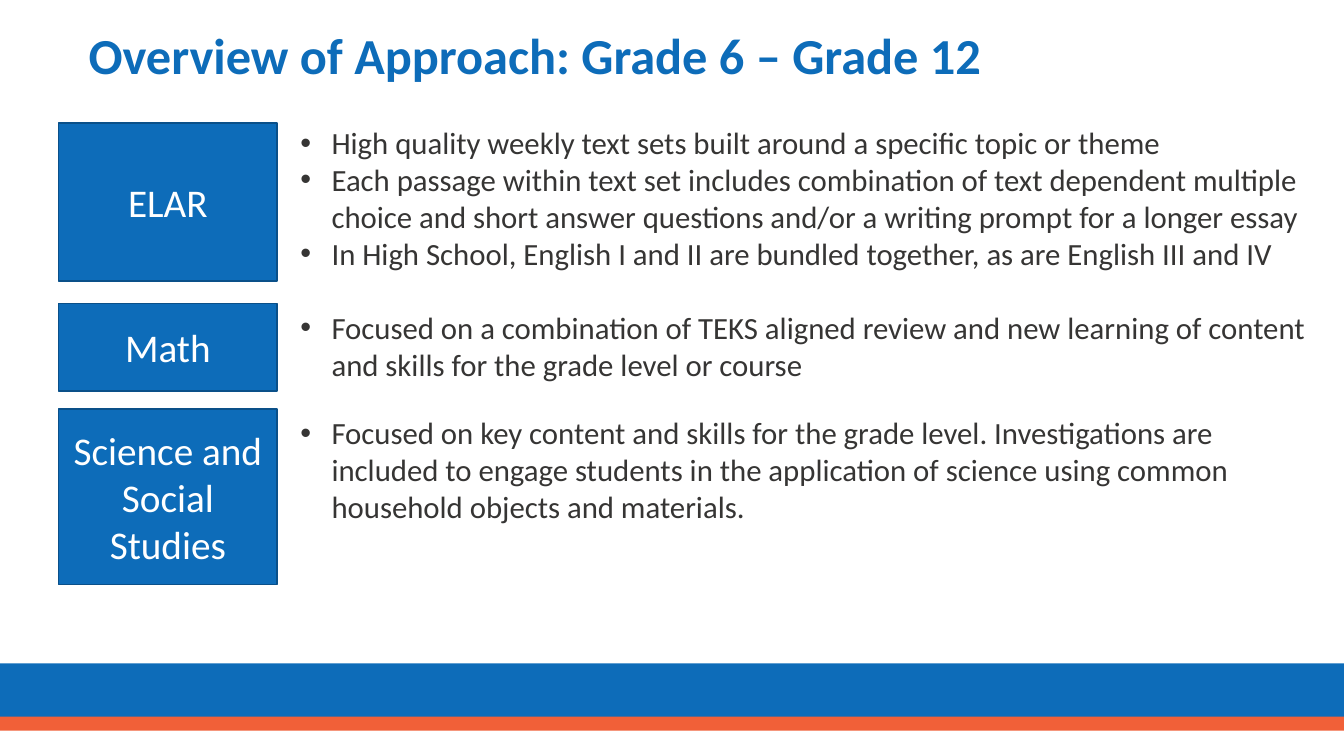
from dataclasses import dataclass

import pptx
import pptx.dml.color
import pptx.enum.shapes
import pptx.enum.text
import pptx.oxml.ns
import pptx.util
from lxml import etree

Inches = pptx.util.Inches
Pt = pptx.util.Pt
ALIGN = pptx.enum.text.PP_ALIGN
ANCHOR = pptx.enum.text.MSO_ANCHOR


@dataclass(frozen=True)
class Theme:
    blue: str = "0D6CB9"
    dark_blue: str = "0A5089"
    orange: str = "F16038"
    ink: str = "363534"
    white: str = "FFFFFF"
    font: str = "Calibri"
    title_size: int = 36
    subject_size: int = 28
    point_size: int = 22


THEME = Theme()

SUBJECTS = [
    ("ELAR", 1.22, 1.57, 1.18, 1.58, [
        "High quality weekly text sets built around a specific topic or theme",
        "Each passage within text set includes combination of text dependent multiple "
        "choice and short answer questions and/or a writing prompt for a longer essay",
        "In High School, English I and II are bundled together, as are English III and IV",
    ]),
    ("Math", 3.01, 0.87, 3.01, 0.84, [
        "Focused on a combination of TEKS aligned review and new learning of content "
        "and skills for the grade level or course",
    ]),
    ("Science and Social Studies", 4.06, 1.74, 4.06, 1.21, [
        "Focused on key content and skills for the grade level. Investigations are "
        "included to engage students in the application of science using common "
        "household objects and materials.",
    ]),
]


def rgb(color):
    return pptx.dml.color.RGBColor.from_string(color)


def apply(target, values):
    for name, value in values.items():
        setattr(target, name, value)


def write(paragraph, text, size, color, **layout):
    paragraph.text = text
    apply(paragraph, layout)
    apply(paragraph.font, {"name": THEME.font, "size": Pt(size)})
    paragraph.font.color.rgb = rgb(color)


def add_box(slide, left, top, width, height, fill, outline=None):
    box = slide.shapes.add_shape(
        pptx.enum.shapes.MSO_SHAPE.RECTANGLE,
        Inches(left), Inches(top), Inches(width), Inches(height))
    box.shadow.inherit = False
    box.fill.solid()
    box.fill.fore_color.rgb = rgb(fill)
    if outline:
        box.line.color.rgb = rgb(outline)
        box.line.width = Pt(1)
    else:
        box.line.fill.background()
    return box


def add_text_frame(slide, left, top, width, height, **layout):
    frame = slide.shapes.add_textbox(
        Inches(left), Inches(top), Inches(width), Inches(height)).text_frame
    apply(frame, {"word_wrap": True, **layout})
    return frame


def add_title(slide, text):
    frame = add_text_frame(slide, 0.78, 0.17, 12.16, 0.82,
                           vertical_anchor=ANCHOR.MIDDLE)
    heading = frame.paragraphs[0]
    write(heading, text, THEME.title_size, THEME.blue, line_spacing=0.9)
    heading.font.bold = True


def add_subject(slide, name, top, height):
    frame = add_box(slide, 0.58, top, 2.17, height,
                    THEME.blue, THEME.dark_blue).text_frame
    apply(frame, {"word_wrap": True, "vertical_anchor": ANCHOR.MIDDLE})
    write(frame.paragraphs[0], name, THEME.subject_size, THEME.white,
          alignment=ALIGN.CENTER)


def add_bullet(paragraph):
    indent = Inches(0.31)
    properties = paragraph._p.get_or_add_pPr()
    properties.set("marL", str(indent))
    properties.set("indent", str(-indent))
    qn = pptx.oxml.ns.qn
    etree.SubElement(properties, qn("a:buFont"), typeface="Arial")
    etree.SubElement(properties, qn("a:buChar"), char="•")


def add_points(slide, points, top, height):
    frame = add_text_frame(slide, 2.88, top, 10.21, height,
                           auto_size=pptx.enum.text.MSO_AUTO_SIZE.SHAPE_TO_FIT_TEXT)
    for index, point in enumerate(points):
        paragraph = frame.add_paragraph() if index else frame.paragraphs[0]
        add_bullet(paragraph)
        write(paragraph, point, THEME.point_size, THEME.ink, level=1)


def main():
    deck = pptx.Presentation()
    apply(deck, {"slide_width": Inches(13.33), "slide_height": Inches(7.5)})
    slide = deck.slides.add_slide(deck.slide_layouts[6])
    add_box(slide, 0, 6.58, 13.33, 0.58, THEME.blue)
    add_box(slide, 0, 7.11, 13.33, 0.14, THEME.orange)
    add_title(slide, "Overview of Approach: Grade 6 – Grade 12")
    for name, box_top, box_height, points_top, points_height, points in SUBJECTS:
        add_subject(slide, name, box_top, box_height)
        add_points(slide, points, points_top, points_height)
    deck.save("out.pptx")


if __name__ == "__main__":
    main()
